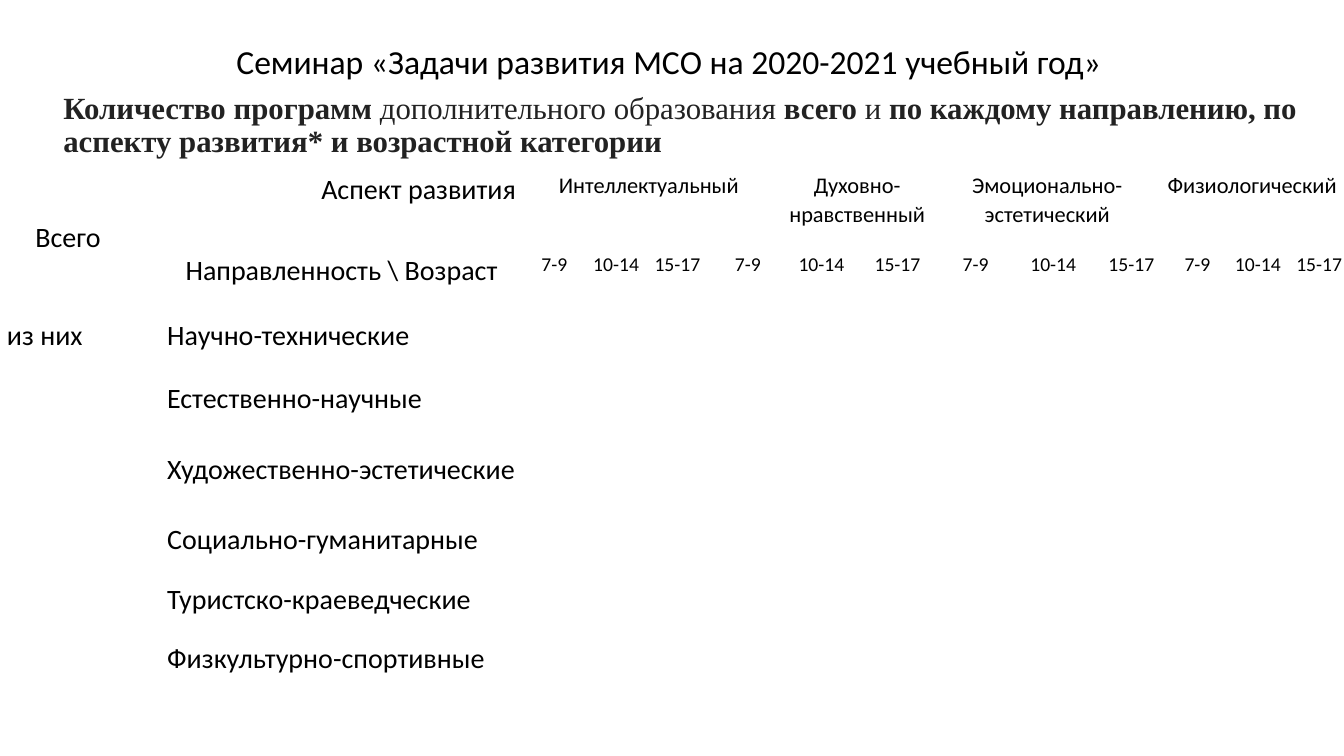
from dataclasses import dataclass
from itertools import product

from lxml.etree import SubElement
from pptx import Presentation
from pptx.dml.color import RGBColor
from pptx.enum.text import MSO_ANCHOR, PP_ALIGN
from pptx.oxml.ns import qn
from pptx.table import Table, _Cell
from pptx.text.text import TextFrame, _Paragraph
from pptx.util import Pt

BLACK = RGBColor(0x00, 0x00, 0x00)
CHARCOAL = RGBColor(0x22, 0x22, 0x22)
WHITE = RGBColor(0xFF, 0xFF, 0xFF)

COLUMN_WIDTHS = [97.2, 13, 259.2, 44.6, 43.8, 43.8, 47.5, 9.4, 48.2,
                 60.5, 51.1, 59.8, 42.5, 9.4, 42.5, 43.8, 43.8]
ROW_HEIGHTS = [57.6, 36.7, 46.1, 43.9, 57.6, 43.2, 42.5, 41.8]
DIRECTIONS = ["Научно-технические", "Естественно-научные", "Художественно-эстетические",
              "Социально-гуманитарные", "Туристско-краеведческие", "Физкультурно-спортивные"]
AGES = ["7-9", "10-14", "15-17"]
AGE_COLUMNS = [3, 4, 5, 6, 8, 9, 10, 11, 12, 14, 15, 16]
SPLIT_COLUMNS = [6, 12]


@dataclass(frozen=True)
class Aspect:
    name: str
    first: int
    last: int


@dataclass(frozen=True)
class Entry:
    text: str
    row: int
    column: int
    size: float = 20
    align: PP_ALIGN = PP_ALIGN.LEFT
    anchor: MSO_ANCHOR = MSO_ANCHOR.TOP


ASPECTS = [
    Aspect("Интеллектуальный", 3, 6),
    Aspect("Духовно-нравственный", 7, 9),
    Aspect("Эмоционально-эстетический", 10, 12),
    Aspect("Физиологический", 13, 16),
]


def add_run(paragraph: _Paragraph, text: str, *, size: float, font: str = "Calibri",
            color: RGBColor = BLACK, bold: bool = False) -> None:
    run = paragraph.add_run()
    run.text = text
    run.font.size = Pt(size)
    run.font.name = font
    run.font.color.rgb = color
    run.font.bold = bold


def add_text_frame(slide, left: float, top: float, width: float, height: float,
                   align: PP_ALIGN) -> TextFrame:
    frame = slide.shapes.add_textbox(Pt(left), Pt(top), Pt(width), Pt(height)).text_frame
    frame.word_wrap = True
    frame.paragraphs[0].alignment = align
    frame.paragraphs[0].line_spacing = 0.9
    return frame


def style_cell(cell: _Cell, bottom: float) -> None:
    properties = cell._tc.get_or_add_tcPr()
    for side, width in (("L", 1), ("R", 1), ("T", 1), ("B", bottom)):
        line = SubElement(properties, qn(f"a:ln{side}"), w=str(Pt(width)))
        fill = SubElement(line, qn("a:solidFill"))
        SubElement(fill, qn("a:srgbClr"), val=str(WHITE))
    cell.fill.background()


def fill_cell(table: Table, entry: Entry) -> None:
    cell = table.cell(entry.row, entry.column)
    cell.margin_left = cell.margin_right = Pt(5)
    cell.margin_top = cell.margin_bottom = Pt(0)
    cell.vertical_anchor = entry.anchor
    paragraph = cell.text_frame.paragraphs[0]
    paragraph.alignment = entry.align
    paragraph.line_spacing = 1.07
    paragraph.space_after = Pt(8)
    add_run(paragraph, entry.text, size=entry.size)


def table_entries() -> list[Entry]:
    center, middle = PP_ALIGN.CENTER, MSO_ANCHOR.MIDDLE
    entries = [
        Entry("Всего", 0, 0, align=center, anchor=middle),
        Entry("Аспект развития", 0, 2, align=PP_ALIGN.RIGHT),
        Entry("Направленность \\ Возраст", 1, 2, align=center),
        Entry("из них", 2, 0, anchor=middle),
    ]
    entries += [Entry(aspect.name, 0, aspect.first, 16, center) for aspect in ASPECTS]
    entries += [Entry(AGES[index % len(AGES)], 1, column, 14, center)
                for index, column in enumerate(AGE_COLUMNS)]
    entries += [Entry(name, row, 2, anchor=middle)
                for row, name in enumerate(DIRECTIONS, start=2)]
    return entries


def add_programme_table(slide) -> None:
    table = slide.shapes.add_table(
        len(ROW_HEIGHTS), len(COLUMN_WIDTHS), Pt(0), Pt(121.7),
        Pt(sum(COLUMN_WIDTHS)), Pt(sum(ROW_HEIGHTS))).table
    table.first_row = table.horz_banding = False
    for column, width in zip(table.columns, COLUMN_WIDTHS):
        column.width = Pt(width)
    for row, height in zip(table.rows, ROW_HEIGHTS):
        row.height = Pt(height)
    for row, column in product(range(len(ROW_HEIGHTS)), range(len(COLUMN_WIDTHS))):
        header = row == 0 or (row == 1 and column < 2)
        style_cell(table.cell(row, column), 3 if header else 1)
    for column in (0, 1):
        table.cell(0, column).merge(table.cell(1, column))
    for aspect in ASPECTS:
        table.cell(0, aspect.first).merge(table.cell(0, aspect.last))
    for row, column in product(range(1, len(ROW_HEIGHTS)), SPLIT_COLUMNS):
        table.cell(row, column).merge(table.cell(row, column + 1))
    for entry in table_entries():
        fill_cell(table, entry)


def main() -> None:
    presentation = Presentation()
    presentation.slide_width, presentation.slide_height = Pt(960), Pt(540)
    slide = presentation.slides.add_slide(presentation.slide_layouts[6])

    subject = add_text_frame(slide, 38.2, 62.6, 895, 59.8, PP_ALIGN.JUSTIFY)
    for text, bold in (
        ("Количество программ", True),
        (" дополнительного образования ", False),
        ("всего", True),
        (" и ", False),
        ("по каждому направлению, по аспекту развития* и возрастной категории", True),
    ):
        add_run(subject.paragraphs[0], text, size=22, font="Times New Roman",
                color=CHARCOAL, bold=bold)

    seminar = add_text_frame(slide, 38.2, 28.8, 879.1, 33.8, PP_ALIGN.CENTER)
    add_run(seminar.paragraphs[0],
            "Семинар «Задачи развития МСО на 2020-2021 учебный год»", size=24)

    add_programme_table(slide)
    presentation.save("out.pptx")


if __name__ == "__main__":
    main()
